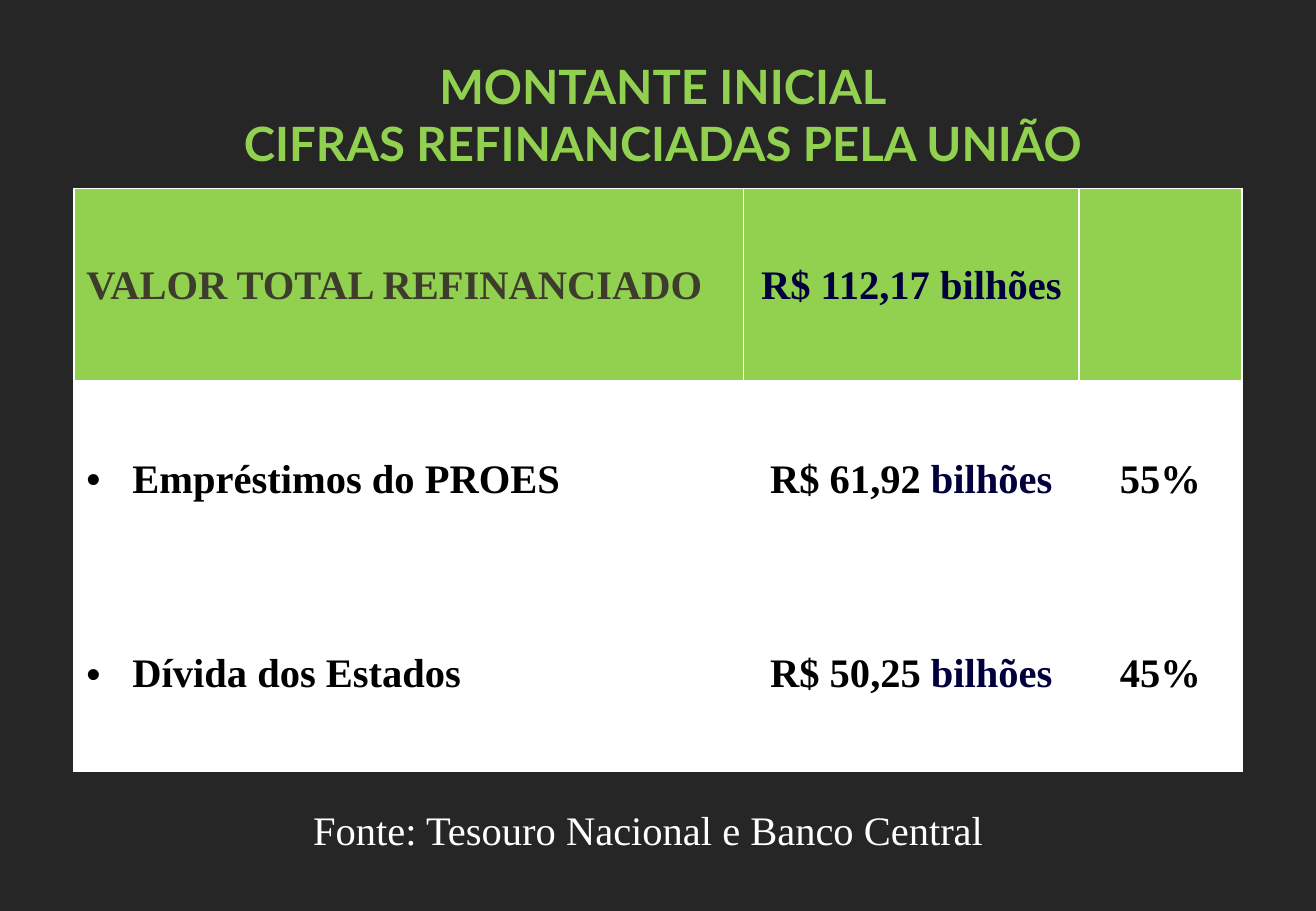
from dataclasses import dataclass

from lxml import etree
from pptx import Presentation
from pptx.dml.color import RGBColor
from pptx.enum.text import MSO_ANCHOR, MSO_AUTO_SIZE, PP_ALIGN
from pptx.oxml.ns import qn
from pptx.table import _Cell
from pptx.text.text import TextFrame, _Paragraph, _Run
from pptx.util import Emu, Pt

CENTER = PP_ALIGN.CENTER
LEFT = PP_ALIGN.LEFT
MIDDLE = MSO_ANCHOR.MIDDLE
NO_AUTOFIT = MSO_AUTO_SIZE.NONE

CHARCOAL = RGBColor(0x26, 0x26, 0x26)
GREEN = RGBColor(0x92, 0xD0, 0x50)
OLIVE = RGBColor(0x3E, 0x3D, 0x2D)
NAVY = RGBColor(0x00, 0x00, 0x3D)
BLACK = RGBColor(0x00, 0x00, 0x00)
WHITE = RGBColor(0xFF, 0xFF, 0xFF)

EMU_PER_PX = 9144
TITLE_FONT = "Lato"
BODY_FONT = "Times New Roman"
TITLE_ONLY_LAYOUT = 5
COLUMN_WIDTHS = (551, 276, 134)
ROW_HEIGHT = 160
BULLET_INDENT = 38


@dataclass(frozen=True)
class Span:
    text: str
    color: RGBColor


@dataclass(frozen=True)
class Entry:
    spans: tuple[Span, ...] = ()
    align: PP_ALIGN = CENTER
    bullet: bool = False


def debt_row(label: str, amount: str, share: str) -> tuple[Entry, ...]:
    return (
        Entry((Span(label, BLACK),), LEFT, True),
        Entry((Span(f"{amount} ", BLACK), Span("bilhões", NAVY))),
        Entry((Span(share, BLACK),)),
    )


ROWS = (
    (
        Entry((Span("VALOR TOTAL REFINANCIADO", OLIVE),), LEFT),
        Entry((Span("R$ 112,17 bilhões", NAVY),)),
        Entry(),
    ),
    debt_row("Empréstimos do PROES", "R$ 61,92", "55%"),
    debt_row("Dívida dos Estados", "R$ 50,25", "45%"),
)


def px(length: int) -> Emu:
    return Emu(length * EMU_PER_PX)


def format_run(run: _Run, font: str, size: int, color: RGBColor, bold: bool) -> None:
    run.font.name = font
    run.font.size = Pt(size)
    run.font.bold = bold
    run.font.color.rgb = color


def write_lines(frame: TextFrame, text: str, font: str, size: int,
                color: RGBColor, bold: bool) -> None:
    frame.text = text
    frame.word_wrap = True
    frame.auto_size = NO_AUTOFIT
    frame.vertical_anchor = MIDDLE
    for paragraph in frame.paragraphs:
        paragraph.alignment = CENTER
        for run in paragraph.runs:
            format_run(run, font, size, color, bold)


def add_bullet(paragraph: _Paragraph) -> None:
    properties = paragraph._p.get_or_add_pPr()
    properties.set("marL", str(px(BULLET_INDENT)))
    properties.set("indent", str(-px(BULLET_INDENT)))
    etree.SubElement(properties, qn("a:buFont"), typeface="Arial")
    etree.SubElement(properties, qn("a:buChar"), char="•")


def add_borders(cell: _Cell, bottom_points: int) -> None:
    properties = cell._tc.get_or_add_tcPr()
    edges = (("a:lnL", 1), ("a:lnR", 1), ("a:lnT", 1), ("a:lnB", bottom_points))
    for tag, points in edges:
        edge = etree.SubElement(properties, qn(tag), w=str(Pt(points)))
        fill = etree.SubElement(edge, qn("a:solidFill"))
        etree.SubElement(fill, qn("a:srgbClr"), val=str(WHITE))


def fill_cell(cell: _Cell, entry: Entry, is_header: bool) -> None:
    add_borders(cell, 3 if is_header else 1)
    cell.fill.solid()
    cell.fill.fore_color.rgb = GREEN if is_header else WHITE
    cell.vertical_anchor = MIDDLE
    paragraph = cell.text_frame.paragraphs[0]
    paragraph.alignment = entry.align
    for span in entry.spans:
        run = paragraph.add_run()
        run.text = span.text
        format_run(run, BODY_FONT, 24, span.color, True)
    if entry.bullet:
        add_bullet(paragraph)


def main() -> None:
    presentation = Presentation()
    presentation.slide_width = px(1083)
    presentation.slide_height = px(750)
    slide = presentation.slides.add_slide(presentation.slide_layouts[TITLE_ONLY_LAYOUT])
    slide.background.fill.solid()
    slide.background.fill.fore_color.rgb = CHARCOAL

    heading = slide.shapes.title
    heading.left, heading.top = px(61), px(42)
    heading.width, heading.height = px(969), px(104)
    write_lines(heading.text_frame, "MONTANTE INICIAL\nCIFRAS REFINANCIADAS PELA UNIÃO",
                TITLE_FONT, 28, GREEN, True)

    amounts = slide.shapes.add_table(
        len(ROWS), len(COLUMN_WIDTHS), px(61), px(155),
        px(sum(COLUMN_WIDTHS)), px(ROW_HEIGHT * len(ROWS))).table
    for column, width in zip(amounts.columns, COLUMN_WIDTHS):
        column.width = px(width)
    for row_index, entries in enumerate(ROWS):
        amounts.rows[row_index].height = px(ROW_HEIGHT)
        for column_index, entry in enumerate(entries):
            fill_cell(amounts.cell(row_index, column_index), entry, row_index == 0)

    source = slide.shapes.add_textbox(px(195), px(658), px(677), px(50))
    write_lines(source.text_frame, "Fonte: Tesouro Nacional e Banco Central",
                BODY_FONT, 24, WHITE, False)

    presentation.save("out.pptx")


if __name__ == "__main__":
    main()
